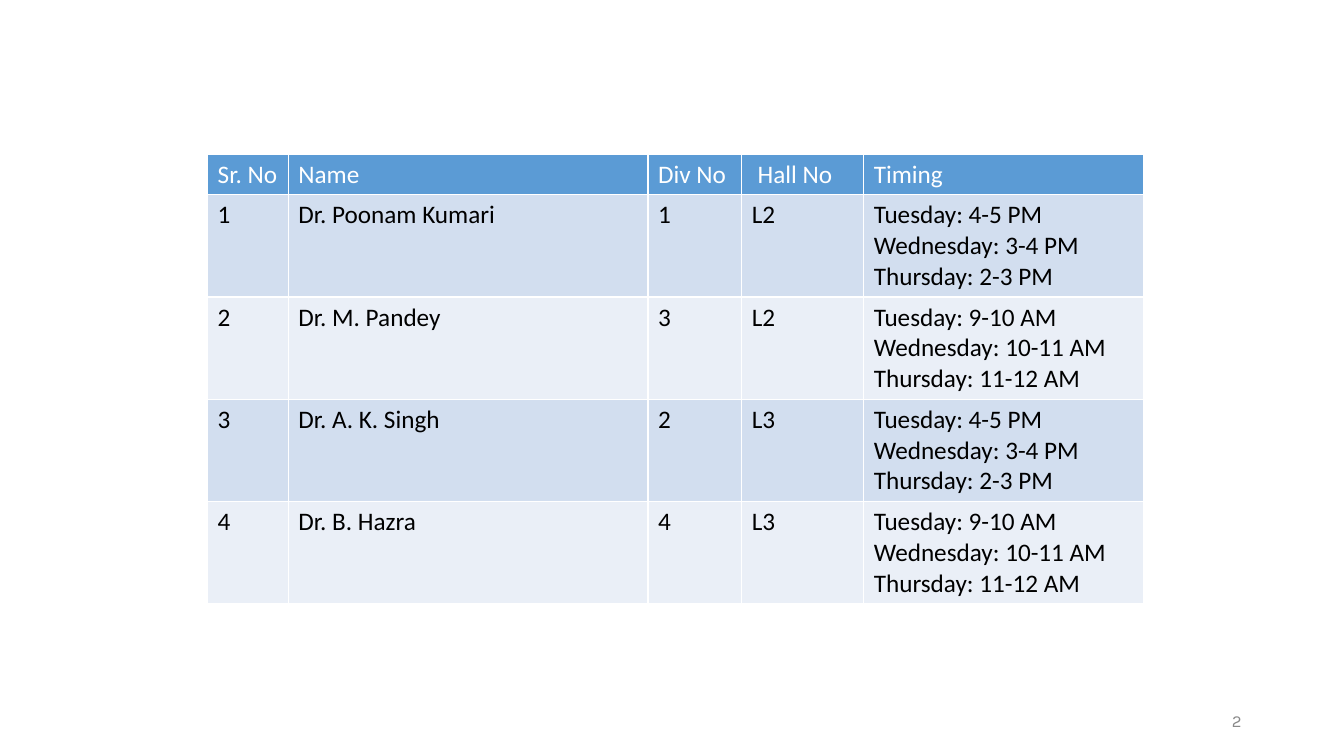
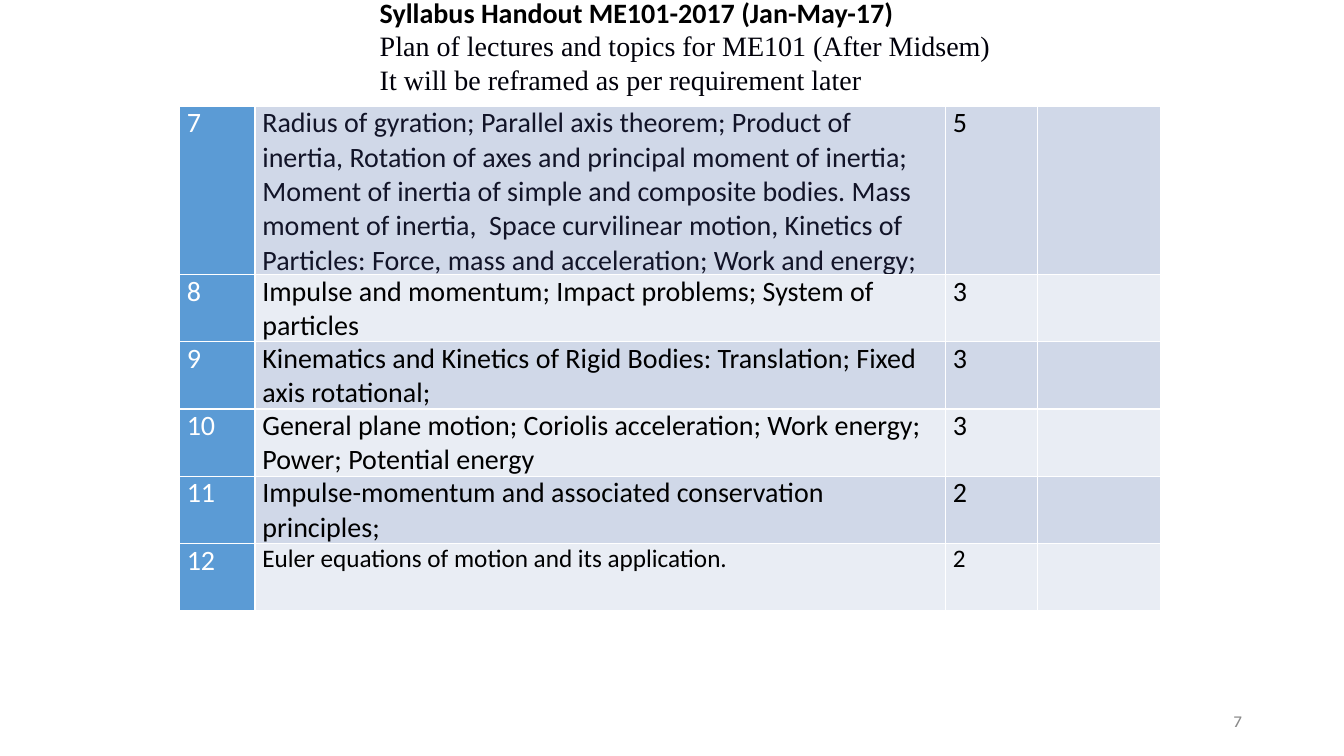
import pptx
import pptx.util
import pptx.dml.color
import pptx.enum.text
import lxml.etree

Pt = pptx.util.Pt
RGB = pptx.dml.color.RGBColor.from_string
ANCHOR = pptx.enum.text.MSO_ANCHOR
ALIGN = pptx.enum.text.PP_ALIGN

# Theme
THEME = {
    "head": "5B9BD5", "white": "FFFFFF", "black": "000000",
    "ink": "121428", "dark": "00000A", "gray": "898989",
    "body": "Calibri", "serif": "Times New Roman", "foot": "Karla",
    "large": 20, "mid": 18, "small": 12,
}

# Content
EARLY = "Tuesday: 9-10 AM\nWednesday: 10-11 AM\nThursday: 11-12 AM"
LATE = "Tuesday: 4-5 PM\nWednesday: 3-4 PM\nThursday: 2-3 PM"
STAFF = [
    ("Sr. No", "Name", "Div No", " Hall No", "Timing"),
    ("1", "Dr. Poonam Kumari", "1", "L2", LATE),
    ("2", "Dr. M. Pandey", "3", "L2", EARLY),
    ("3", "Dr. A. K. Singh", "2", "L3", LATE),
    ("4", "Dr. B. Hazra", "4", "L3", EARLY),
]
TOPICS = [
    ("7", "Radius of gyration; Parallel axis theorem; Product of inertia, "
          "Rotation of axes and principal moment of inertia; Moment of inertia "
          "of simple and composite bodies. Mass moment of inertia,  Space "
          "curvilinear motion, Kinetics of Particles: Force, mass and "
          "acceleration; Work and energy;", "5", ""),
    ("8", "Impulse and momentum; Impact problems; System of particles", "3", ""),
    ("9", "Kinematics and Kinetics of Rigid Bodies: Translation; "
          "Fixed axis rotational;", "3", ""),
    ("10", "General plane motion; Coriolis acceleration; Work energy; "
           "Power; Potential energy", "3", ""),
    ("11", "Impulse-momentum and associated conservation principles;", "2", ""),
    ("12", "Euler equations of motion and its application.", "2", ""),
]
TITLE = [
    ("Syllabus Handout ME101-2017 (Jan-May-17)",
     {"font": "body", "color": "black", "bold": True}),
    ("Plan of lectures and topics for ME101 (After Midsem)",
     {"font": "serif", "color": "dark"}),
    ("It will be reframed as per requirement later",
     {"font": "serif", "color": "dark"}),
]
PAGES = [
    {"num": "2", "title": [], "rows": STAFF, "at": (148.3, 110.2),
     "wide": (57.6, 257, 67, 87.1, 200.2), "high": (29, 73, 73, 73, 73),
     "bands": ("D2DEEF", "EAEFF7"), "lead": "row", "size": "mid",
     "pad": (7.2, 3.6), "style": {}},
    {"num": "7", "title": TITLE, "rows": TOPICS, "at": (128.2, 75.9),
     "wide": (54, 493.2, 65.5, 87.8), "high": (118.5, 48, 48, 48, 48, 48),
     "bands": ("D0D8E8", "E9EDF4"), "lead": "col", "size": "large",
     "pad": (5.2, 0),
     "style": {(0, 1): {"color": "ink"}, (5, 1): {"size": "mid"},
               (5, 2): {"size": "mid"}}},
]


def assign(item, values):
    for name, value in values.items():
        setattr(item, name, value)


def write(para, text, font="body", size="large", color="black", bold=False):
    run = para.add_run()
    run.text = text
    assign(run.font, {"name": THEME[font], "size": Pt(THEME[size]), "bold": bold})
    run.font.color.rgb = RGB(THEME[color])


def add_text(slide, box, lines, anchor, align):
    frame = slide.shapes.add_textbox(*map(Pt, box)).text_frame
    assign(frame, {"word_wrap": True, "vertical_anchor": anchor})
    for i, (text, look) in enumerate(lines):
        para = frame.add_paragraph() if i else frame.paragraphs[0]
        para.alignment = align
        write(para, text, **look)


def edge(cell):
    """Draw a white line on each side, ahead of the cell's fill."""
    props = cell._tc.get_or_add_tcPr()
    space = "{http://schemas.openxmlformats.org/drawingml/2006/main}"
    for i, side in enumerate(("lnL", "lnR", "lnT", "lnB")):
        line = lxml.etree.Element(space + side, w=str(Pt(1)))
        fill = lxml.etree.SubElement(line, space + "solidFill")
        lxml.etree.SubElement(fill, space + "srgbClr", val=THEME["white"])
        props.insert(i, line)


def add_grid(slide, page):
    rows, wide, high = page["rows"], page["wide"], page["high"]
    box = (*page["at"], sum(wide), sum(high))
    grid = slide.shapes.add_table(len(rows), len(wide), *map(Pt, box)).table
    by_row = page["lead"] == "row"
    assign(grid, {"first_row": by_row, "first_col": not by_row,
                  "horz_banding": False})
    for col, width in zip(grid.columns, wide):
        col.width = Pt(width)
    side, top = map(Pt, page["pad"])
    for r, row in enumerate(rows):
        grid.rows[r].height = Pt(high[r])
        for c, text in enumerate(row):
            cell = grid.cell(r, c)
            lead = (r if by_row else c) == 0
            assign(cell, {"margin_left": side, "margin_right": side,
                          "margin_top": top, "margin_bottom": top})
            cell.fill.solid()
            band = page["bands"][(r - by_row) % 2]
            cell.fill.fore_color.rgb = RGB(THEME["head"] if lead else band)
            edge(cell)
            look = {"size": page["size"], "color": "white" if lead else "black"}
            look.update(page["style"].get((r, c), {}))
            frame = cell.text_frame
            for i, part in enumerate(text.split("\n") if text else []):
                para = frame.add_paragraph() if i else frame.paragraphs[0]
                write(para, part, **look)


def main():
    deck = pptx.Presentation()
    assign(deck, {"slide_width": Pt(960), "slide_height": Pt(540)})
    for page in PAGES:
        slide = deck.slides.add_slide(deck.slide_layouts[6])
        # Page number
        look = {"font": "foot", "size": "small", "color": "gray"}
        add_text(slide, (678, 500.5, 216, 28.75), [(page["num"], look)],
                 ANCHOR.MIDDLE, ALIGN.RIGHT)
        # Table and heading
        add_grid(slide, page)
        if page["title"]:
            add_text(slide, (264.2, -7, 471, 104.4), page["title"],
                     ANCHOR.TOP, ALIGN.LEFT)
    deck.save("out.pptx")


if __name__ == "__main__":
    main()
